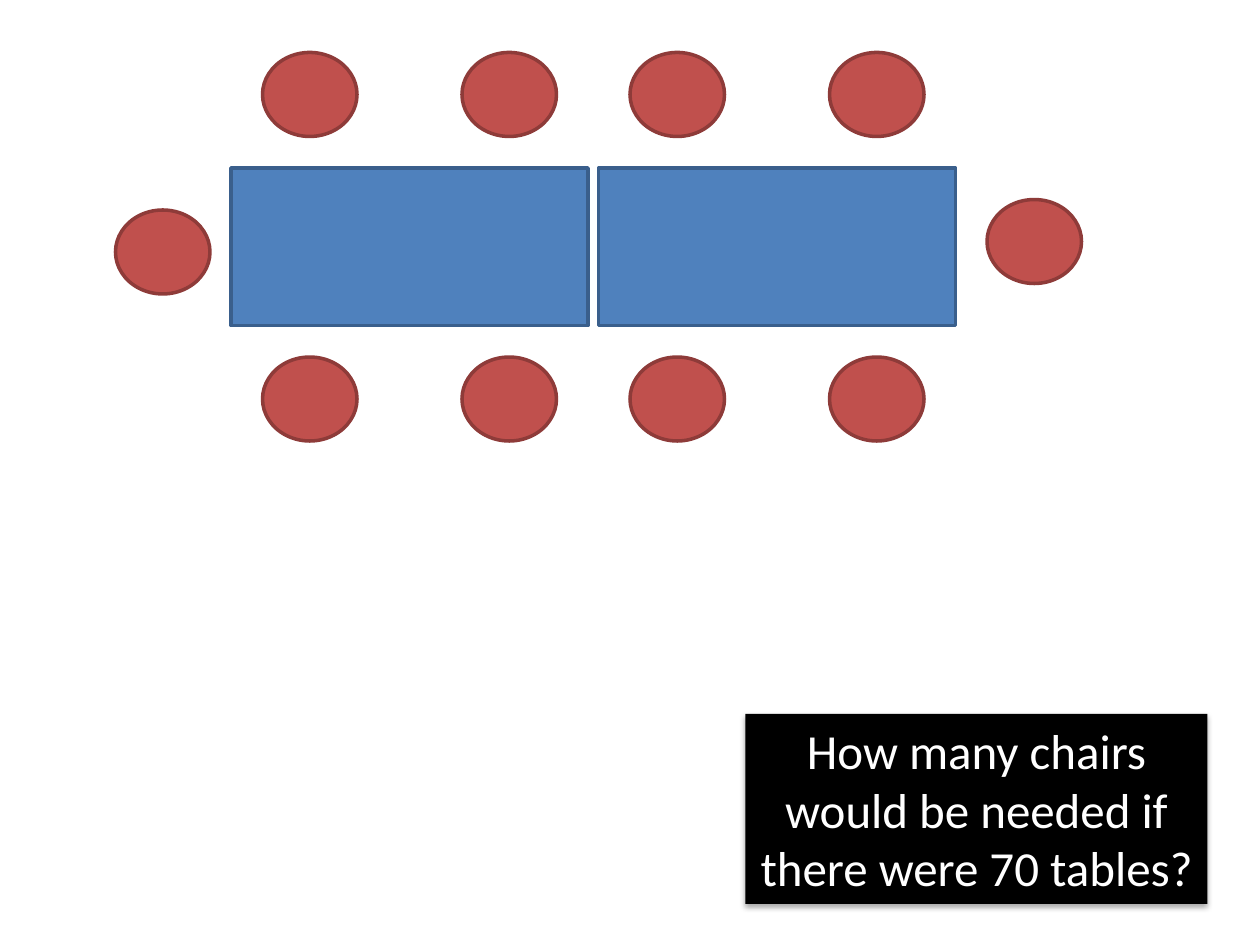
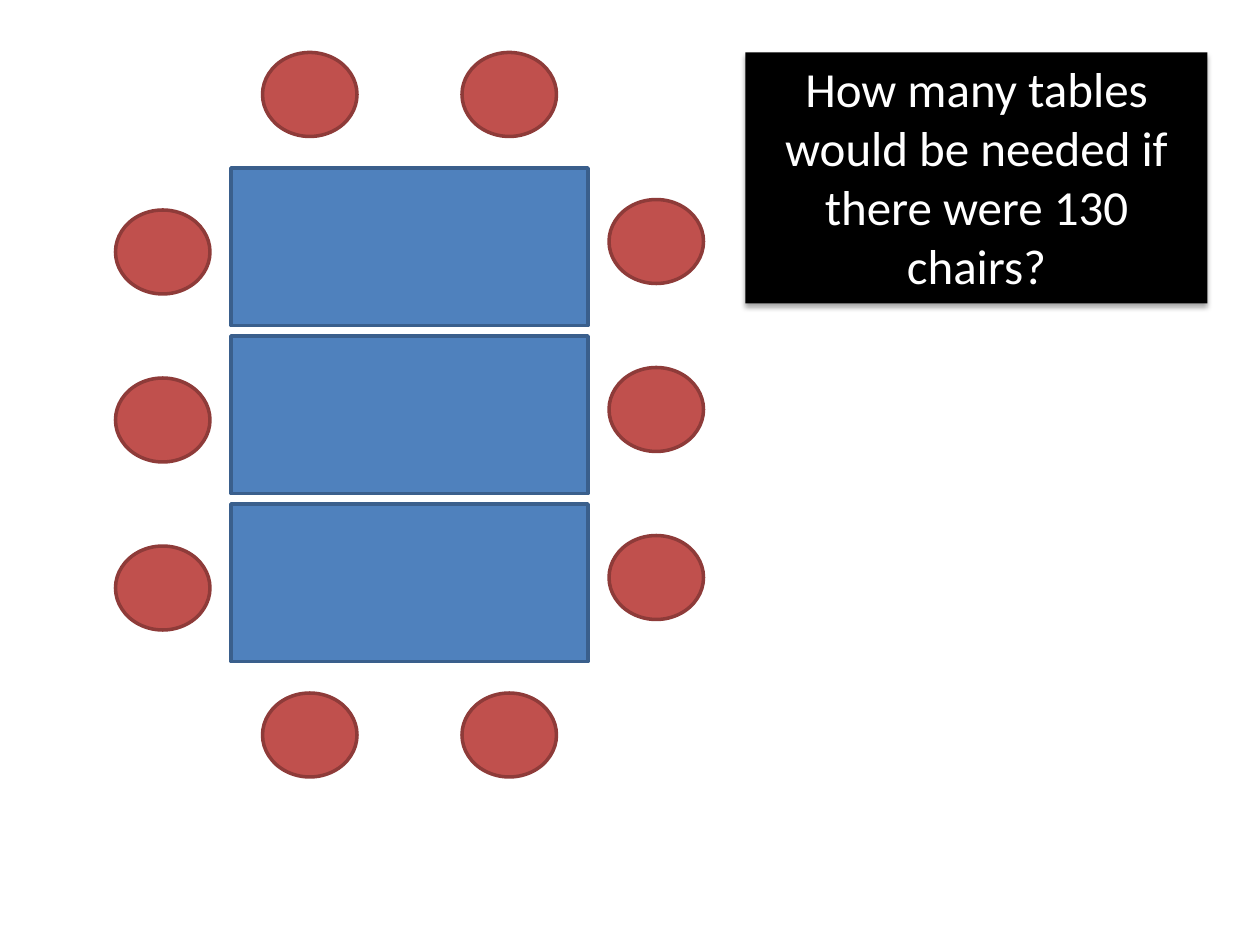
from lxml import etree
from pptx import Presentation
from pptx.dml.color import RGBColor
from pptx.enum.shapes import MSO_SHAPE as SHAPE
from pptx.enum.text import MSO_ANCHOR as ANCHOR, MSO_AUTO_SIZE as AUTO_SIZE, PP_ALIGN as ALIGN
from pptx.oxml import parse_xml
from pptx.util import Pt

PX = 7620  # EMU per px, 120 px to the inch

TABLE_FILL = RGBColor(0x4F, 0x81, 0xBD)
TABLE_EDGE = RGBColor(0x3A, 0x5F, 0x8C)
CHAIR_FILL = RGBColor(0xC0, 0x50, 0x4D)
CHAIR_EDGE = RGBColor(0x8E, 0x3B, 0x39)
BLACK = RGBColor(0, 0, 0)
WHITE = RGBColor(0xFF, 0xFF, 0xFF)

TABLE_W, TABLE_H, TABLE_GAP = 340, 150, 10
CHAIR_W, CHAIR_H, CHAIR_GAP = 90, 80, 30
FIRST_X, FIRST_Y = 220, 160
LEFT_CHAIR_X = 110

SHADOW = """<a:effectLst xmlns:a="http://schemas.openxmlformats.org/drawingml/2006/main">
<a:outerShdw blurRad="40000" dist="23000" dir="5400000" rotWithShape="0">
<a:srgbClr val="000000"><a:alpha val="35000"/></a:srgbClr></a:outerShdw></a:effectLst>"""


def add_block(slide, kind, x, y, w, h, fill, edge=None):
    block = slide.shapes.add_shape(kind, x * PX, y * PX, w * PX, h * PX)
    block.shadow.inherit = False
    block.fill.solid()
    block.fill.fore_color.rgb = fill
    if edge is None:
        block.line.fill.background()
    else:
        block.line.color.rgb = edge
        block.line.width = Pt(2)
    return block


def add_chair(slide, x, y):
    add_block(slide, SHAPE.OVAL, x, y, CHAIR_W, CHAIR_H, CHAIR_FILL, CHAIR_EDGE)


# Question, tables across, tables down, gap to right chairs, question top and height
layouts = [
    ("How many chairs would be needed if there were 70 tables?", 2, 1, 30, 680, 181),
    ("How many tables would be needed if there were 130 chairs?", 1, 3, 20, 50, 239),
]

prs = Presentation()
prs.slide_width, prs.slide_height = 1200 * PX, 900 * PX

for question, across, down, right_gap, question_y, question_h in layouts:
    slide = prs.slides.add_slide(prs.slide_layouts[6])
    table_xs = [FIRST_X + i * (TABLE_W + TABLE_GAP) for i in range(across)]
    table_ys = [FIRST_Y + i * (TABLE_H + TABLE_GAP) for i in range(down)]

    # Tables
    for x in table_xs:
        for y in table_ys:
            add_block(slide, SHAPE.RECTANGLE, x, y, TABLE_W, TABLE_H, TABLE_FILL, TABLE_EDGE)

    # Two chairs above and below each column of tables
    for x in table_xs:
        for y in (FIRST_Y - CHAIR_GAP - CHAIR_H, table_ys[-1] + TABLE_H + CHAIR_GAP):
            for offset in (30, 220):
                add_chair(slide, x + offset, y)

    # One chair at each end of every row
    for y in table_ys:
        add_chair(slide, LEFT_CHAIR_X, y + 40)
        add_chair(slide, table_xs[-1] + TABLE_W + right_gap, y + 30)

    # Question
    question_box = add_block(slide, SHAPE.RECTANGLE, 710, question_y, 440, question_h, BLACK)
    properties = question_box.element.spPr
    properties.replace(properties.find("{*}effectLst"), parse_xml(SHADOW))
    frame = question_box.text_frame
    frame.word_wrap = True
    frame.auto_size = AUTO_SIZE.SHAPE_TO_FIT_TEXT
    frame.vertical_anchor = ANCHOR.TOP
    frame.text = question
    paragraph = frame.paragraphs[0]
    paragraph.alignment = ALIGN.CENTER
    paragraph.font.name = "Calibri"
    paragraph.font.size = Pt(28)
    paragraph.font.color.rgb = WHITE

prs.save("out.pptx")
